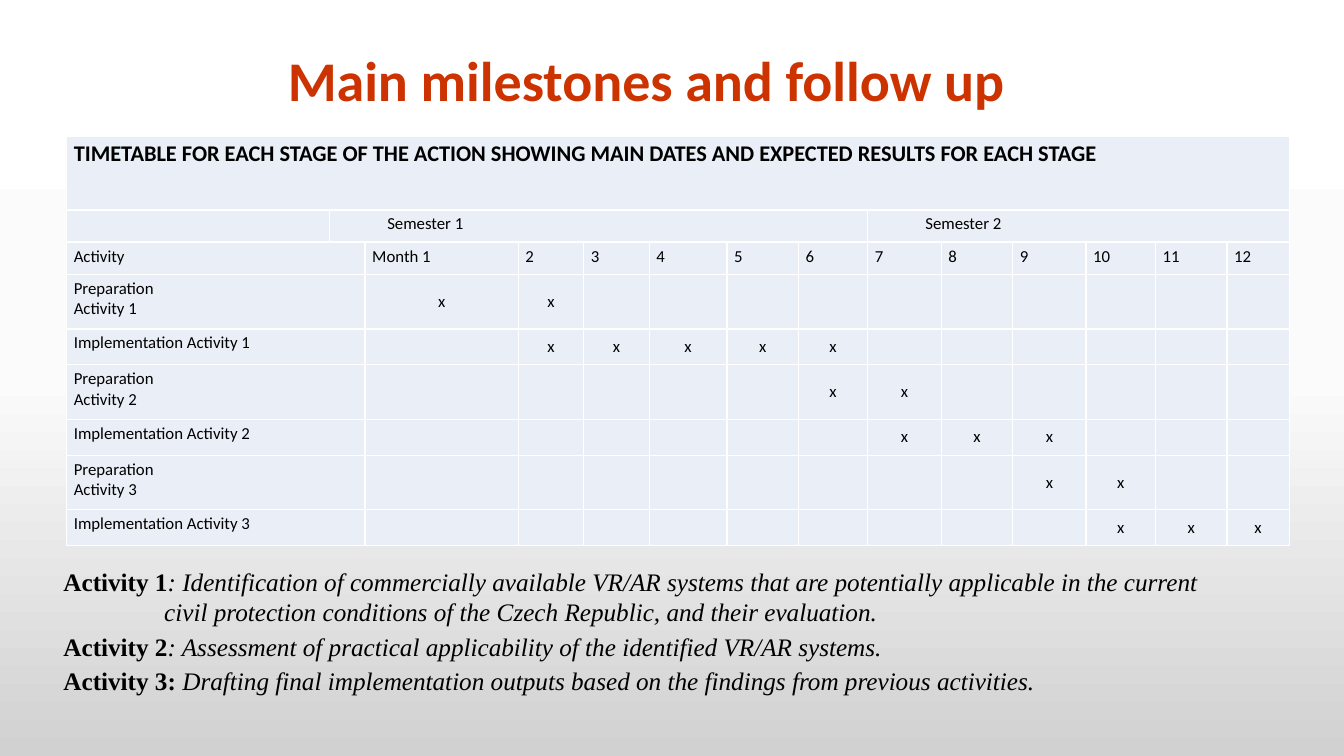
from copy import deepcopy

from lxml import etree
from pptx import Presentation
from pptx import util as u
from pptx.dml.color import RGBColor
from pptx.enum import text
from pptx.oxml.ns import qn

BLACK, WHITE, TITLE_RED, CELL_BLUE = "000000", "FFFFFF", "CC3300", "EAEFF7"
BACKGROUND = [(0, WHITE), (0.5, "FBFBFB"), (1, "D1D1D1")]

COLUMN_WIDTHS = [6.63, 0.89, 3.86, 1.65, 1.65, 1.96, 1.8, 1.75, 1.85, 1.8, 1.85, 1.75, 1.8, 1.57]
ROW_HEIGHTS = [1.86, 0.81, 0.81] + [1.38, 0.9] * 3
FIRST_MONTH_COLUMN = 2
FIRST_ACTIVITY_ROW = 3
HEADING = "TIMETABLE FOR EACH STAGE OF THE ACTION SHOWING MAIN DATES AND EXPECTED RESULTS FOR EACH STAGE"
# Label and the months in which the activity runs
SCHEDULE = [
    ("Preparation\nActivity 1", range(1, 3)),
    ("Implementation Activity 1", range(2, 7)),
    ("Preparation\nActivity 2", range(6, 8)),
    ("Implementation Activity 2", range(7, 10)),
    ("Preparation\nActivity 3", range(9, 11)),
    ("Implementation Activity 3", range(10, 13)),
]
# Bold lead, italic description, hanging indent in cm
ACTIVITY_NOTES = [
    ("Activity 1", ": Identification of commercially available VR/AR systems that are potentially "
     "applicable in the current civil protection conditions of the Czech Republic, and their evaluation.", 2.54),
    ("Activity 2", ": Assessment of practical applicability of the identified VR/AR systems.", 0),
    ("Activity 3: ", "Drafting final implementation outputs based on the findings from previous activities.", 0),
]


def rgb(hex_color):
    return RGBColor.from_string(hex_color)


def add_text(paragraph, content, size=12, font="Calibri", color=BLACK, bold=False, italic=False, align=None):
    run = paragraph.add_run()
    run.text = content
    run.font.size = u.Pt(size)
    run.font.name = font
    run.font.color.rgb = rgb(color)
    run.font.bold = bold
    run.font.italic = italic
    if align is not None:
        paragraph.alignment = align


def add_text_frame(slide, left, top, width, height):
    shape = slide.shapes.add_textbox(u.Cm(left), u.Cm(top), u.Cm(width), u.Cm(height))
    shape.text_frame.word_wrap = True
    return shape.text_frame


def paint_background(slide):
    fill = slide.background.fill
    fill.gradient()
    fill.gradient_angle = 270
    stop_list = slide.element.find(".//" + qn("a:gsLst"))
    stop_list.append(deepcopy(stop_list[-1]))
    for stop, (position, color) in zip(fill.gradient_stops, BACKGROUND):
        stop.position = position
        stop.color.rgb = rgb(color)


def add_title(slide, left, top, width, height):
    frame = add_text_frame(slide, left, top, width, height)
    frame.vertical_anchor = text.MSO_ANCHOR.MIDDLE
    paragraph = frame.paragraphs[0]
    paragraph.line_spacing = 0.9
    add_text(paragraph, "Main milestones and follow up", size=40, color=TITLE_RED, bold=True,
             align=text.PP_ALIGN.CENTER)


def format_cell(cell):
    """Fill, margins, white borders and the text size of an empty cell."""
    cell.fill.solid()
    cell.fill.fore_color.rgb = rgb(CELL_BLUE)
    cell.margin_left = cell.margin_right = u.Cm(0.18)
    cell.margin_top = cell.margin_bottom = u.Cm(0.1)
    properties = cell._tc.get_or_add_tcPr()
    for index, side in enumerate(("lnL", "lnR", "lnT", "lnB")):
        line = etree.Element(qn(f"a:{side}"), w=str(u.Pt(1)))
        solid = etree.SubElement(line, qn("a:solidFill"))
        etree.SubElement(solid, qn("a:srgbClr"), val=WHITE)
        properties.insert(index, line)
    etree.SubElement(cell.text_frame.paragraphs[0]._p, qn("a:endParaRPr"), sz="1200")


def write_cell(cell, content, align=text.PP_ALIGN.JUSTIFY, **formatting):
    frame = cell.text_frame
    for index, line in enumerate(content.split("\n")):
        paragraph = frame.add_paragraph() if index else frame.paragraphs[0]
        add_text(paragraph, line, align=align, **formatting)


def add_timetable(slide, left, top, width, height):
    table = slide.shapes.add_table(len(ROW_HEIGHTS), len(COLUMN_WIDTHS), u.Cm(left), u.Cm(top),
                                   u.Cm(width), u.Cm(height)).table
    table.first_row = table.horz_banding = False
    for column, column_width in zip(table.columns, COLUMN_WIDTHS):
        column.width = u.Cm(column_width)
    for row, row_height in zip(table.rows, ROW_HEIGHTS):
        row.height = u.Cm(row_height)
    for cell in table.iter_cells():
        format_cell(cell)

    last_column = len(COLUMN_WIDTHS) - 1
    table.cell(0, 0).merge(table.cell(0, last_column))
    write_cell(table.cell(0, 0), HEADING, size=16, bold=True)
    for name, first, last in (("Semester 1", 1, 7), ("Semester 2", 8, last_column)):
        table.cell(1, first).merge(table.cell(1, last))
        write_cell(table.cell(1, first), "\t" + name)

    for row in range(2, len(ROW_HEIGHTS)):
        table.cell(row, 0).merge(table.cell(row, 1))
    write_cell(table.cell(2, 0), "Activity")
    for month in range(1, 13):
        label = "Month 1" if month == 1 else str(month)
        write_cell(table.cell(2, FIRST_MONTH_COLUMN + month - 1), label)

    for row, (activity, months) in enumerate(SCHEDULE, FIRST_ACTIVITY_ROW):
        write_cell(table.cell(row, 0), activity)
        for month in months:
            cell = table.cell(row, FIRST_MONTH_COLUMN + month - 1)
            cell.vertical_anchor = text.MSO_ANCHOR.MIDDLE
            write_cell(cell, "x", align=text.PP_ALIGN.CENTER)


def add_activity_notes(slide, left, top, width, height):
    frame = add_text_frame(slide, left, top, width, height)
    for index, (lead, description, hanging) in enumerate(ACTIVITY_NOTES):
        paragraph = frame.add_paragraph() if index else frame.paragraphs[0]
        paragraph.space_after = u.Pt(3)
        if hanging:
            properties = paragraph._p.get_or_add_pPr()
            properties.set("marL", str(u.Cm(hanging)))
            properties.set("indent", str(-u.Cm(hanging)))
        add_text(paragraph, lead, size=18, font="Times New Roman", bold=True)
        add_text(paragraph, description, size=18, font="Times New Roman", italic=True)


def main():
    presentation = Presentation()
    presentation.slide_width, presentation.slide_height = u.Cm(33.87), u.Cm(19.05)
    slide = presentation.slides.add_slide(presentation.slide_layouts[6])
    paint_background(slide)
    add_title(slide, 1.68, 0.79, 29.21, 2.64)
    add_timetable(slide, 1.68, 3.43, sum(COLUMN_WIDTHS), sum(ROW_HEIGHTS))
    add_activity_notes(slide, 1.35, 14.15, 30.28, 3.56)
    presentation.save("out.pptx")


if __name__ == "__main__":
    main()
